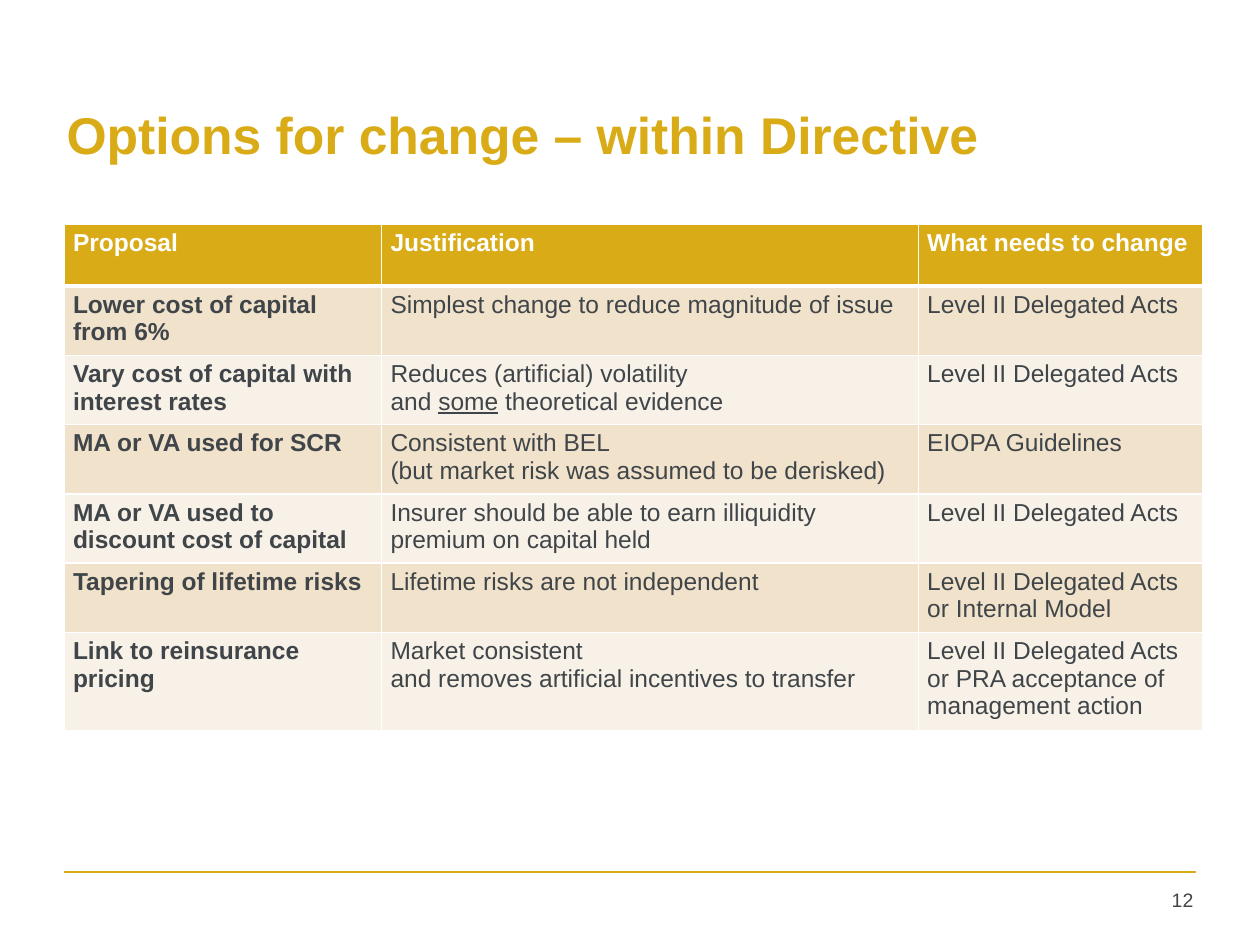
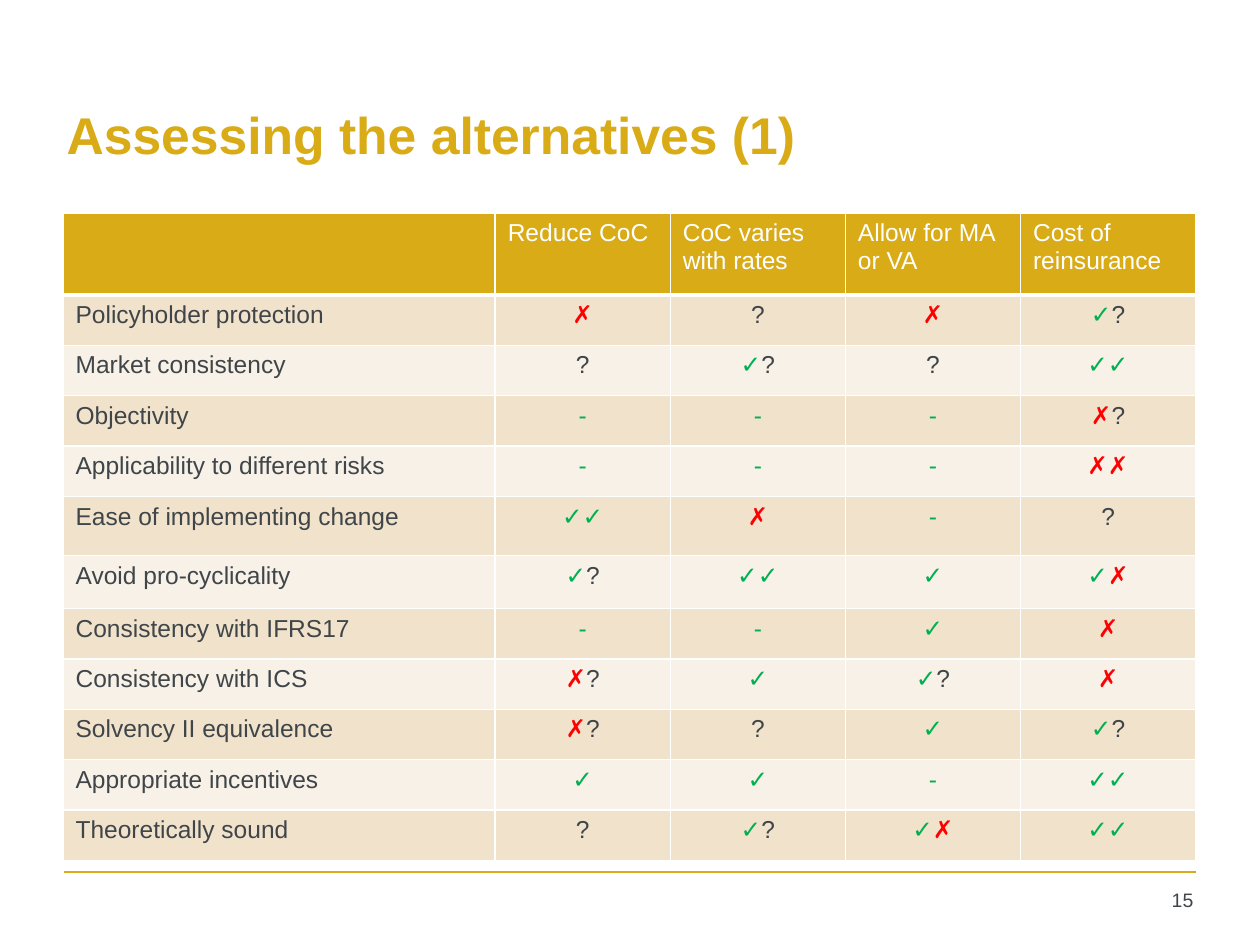
import itertools

import pptx
import pptx.dml.color
import pptx.enum.shapes
import pptx.enum.text
import pptx.oxml
import pptx.oxml.ns
import pptx.util

Inches = pptx.util.Inches
Pt = pptx.util.Pt
RGBColor = pptx.dml.color.RGBColor
PP_ALIGN = pptx.enum.text.PP_ALIGN
ANCHOR = pptx.enum.text.MSO_ANCHOR

FONT = "Arial"
GOLD = RGBColor(0xD9, 0xAB, 0x16)
INK = RGBColor(0x3F, 0x45, 0x48)
WHITE = RGBColor(0xFF, 0xFF, 0xFF)
GREEN = RGBColor(0x00, 0xB0, 0x50)
RED = RGBColor(0xFF, 0x00, 0x00)
BANDS = (RGBColor(0xF1, 0xE2, 0xCC), RGBColor(0xF8, 0xF1, 0xE8))
MARK_COLORS = {"✓": GREEN, "-": GREEN, "✗": RED, "?": INK}

# Underscores enclose underlined words; a newline is a line break.
OPTIONS = [
    ("Proposal", "Justification", "What needs to change"),
    ("Lower cost of capital from 6%",
     "Simplest change to reduce magnitude of issue",
     "Level II Delegated Acts"),
    ("Vary cost of capital with interest rates",
     "Reduces (artificial) volatility\nand _some_ theoretical evidence",
     "Level II Delegated Acts"),
    ("MA or VA used for SCR",
     "Consistent with BEL\n(but market risk was assumed to be derisked)",
     "EIOPA Guidelines"),
    ("MA or VA used to discount cost of capital",
     "Insurer should be able to earn illiquidity premium on capital held",
     "Level II Delegated Acts"),
    ("Tapering of lifetime risks",
     "Lifetime risks are not independent",
     "Level II Delegated Acts\nor Internal Model"),
    ("Link to reinsurance pricing",
     "Market consistent\nand removes artificial incentives to transfer",
     "Level II Delegated Acts or PRA acceptance of management action"),
]
ASSESSMENT = [
    ("", "Reduce CoC", "CoC varies with rates", "Allow for MA or VA", "Cost of reinsurance"),
    ("Policyholder protection", "✗", "?", "✗", "✓?"),
    ("Market consistency", "?", "✓?", "?", "✓✓"),
    ("Objectivity", "-", "-", "-", "✗?"),
    ("Applicability to different risks", "-", "-", "-", "✗✗"),
    ("Ease of implementing change", "✓✓", "✗", "-", "?"),
    ("Avoid pro-cyclicality", "✓?", "✓✓", "✓", "✓✗"),
    ("Consistency with IFRS17", "-", "-", "✓", "✗"),
    ("Consistency with ICS", "✗?", "✓", "✓?", "✗"),
    ("Solvency II equivalence", "✗?", "?", "✓", "✓?"),
    ("Appropriate incentives", "✓", "✓", "-", "✓✓"),
    ("Theoretically sound", "?", "✓?", "✓✗", "✓✓"),
]


def add_run(p, text, size, color, bold=False, underline=None):
    r = p.add_run()
    r.text = text
    r.font.name = FONT
    r.font.size = Pt(size)
    r.font.color.rgb = color
    r.font.bold = bold
    r.font.underline = underline


def add_text(s, box, text, size, color, bold=False, align=PP_ALIGN.LEFT, anchor=ANCHOR.TOP):
    tf = s.shapes.add_textbox(*map(Inches, box)).text_frame
    tf.word_wrap = True
    tf.vertical_anchor = anchor
    p = tf.paragraphs[0]
    p.alignment = align
    add_run(p, text, size, color, bold)


def add_page(prs, title, number):
    """Add a slide with the shared title, footer rule and page number."""
    s = prs.slides.add_slide(prs.slide_layouts[6])
    rule = s.shapes.add_connector(pptx.enum.shapes.MSO_CONNECTOR.STRAIGHT,
                                  *map(Inches, (0.51, 6.92, 9.49, 6.92)))
    rule.line.color.rgb = GOLD
    rule.line.width = Pt(1)
    rule._element.spPr.append(pptx.oxml.parse_xml(
        f"<a:effectLst {pptx.oxml.ns.nsdecls('a')}/>"))
    add_text(s, (0.43, 0.44, 9.07, 1.25), title, 29.5, GOLD, True, anchor=ANCHOR.MIDDLE)
    add_text(s, (8.86, 7, 0.71, 0.37), str(number), 11.1, INK, align=PP_ALIGN.RIGHT)
    return s


def set_borders(cell, row):
    """Thin white borders, thick between the header and the body."""
    widths = {"L": 1, "R": 1, "T": 3 if row == 1 else 1, "B": 3 if row == 0 else 1}
    for i, (side, width) in enumerate(widths.items()):
        cell._tc.get_or_add_tcPr().insert(i, pptx.oxml.parse_xml(
            f'<a:ln{side} {pptx.oxml.ns.nsdecls("a")} w="{Pt(width)}">'
            f'<a:solidFill><a:srgbClr val="{WHITE}"/></a:solidFill></a:ln{side}>'))


def write_words(p, text, color, bold):
    for i, line in enumerate(text.split("\n")):
        if i:
            p.add_line_break()
        for j, part in enumerate(line.split("_")):
            if part:
                add_run(p, part, 14, color, bold, underline=True if j % 2 else None)


def write_marks(p, marks):
    p.alignment = PP_ALIGN.CENTER
    for color, group in itertools.groupby(marks, MARK_COLORS.get):
        add_run(p, "".join(group), 14, color)


def add_grid(s, left, top, widths, heights, rows, bold=False, margins=(0.1, 0.05)):
    """Add a banded table; bold applies to the header and first column."""
    table = s.shapes.add_table(len(rows), len(widths), Inches(left), Inches(top),
                               Inches(sum(widths)), Inches(sum(heights))).table
    table.first_row = table.horz_banding = False
    for column, width in zip(table.columns, widths):
        column.width = Inches(width)
    for i, (row, height) in enumerate(zip(rows, heights)):
        table.rows[i].height = Inches(height)
        for j, text in enumerate(row):
            cell = table.cell(i, j)
            cell.margin_left = cell.margin_right = Inches(margins[0])
            cell.margin_top = cell.margin_bottom = Inches(margins[1])
            cell.fill.solid()
            cell.fill.fore_color.rgb = BANDS[(i - 1) % 2] if i else GOLD
            set_borders(cell, i)
            p = cell.text_frame.paragraphs[0]
            if text and set(text) <= set(MARK_COLORS):
                write_marks(p, text)
            else:
                write_words(p, text, INK if i else WHITE, bold and 0 in (i, j))


def main():
    prs = pptx.Presentation()
    prs.slide_width, prs.slide_height = Inches(10), Inches(7.5)

    s = add_page(prs, "Options for change – within Directive", 12)
    add_grid(s, 0.51, 1.78, [2.52, 4.26, 2.26], [0.49] + [0.55] * 6, OPTIONS,
             bold=True, margins=(0.07, 0.04))

    s = add_page(prs, "Assessing the alternatives (1)", 15)
    add_grid(s, 0.5, 1.69, [3.43] + [1.39] * 4,
             [0.65] + [0.4] * 4 + [0.47, 0.42] + [0.4] * 5, ASSESSMENT)

    prs.save("out.pptx")


if __name__ == "__main__":
    main()
